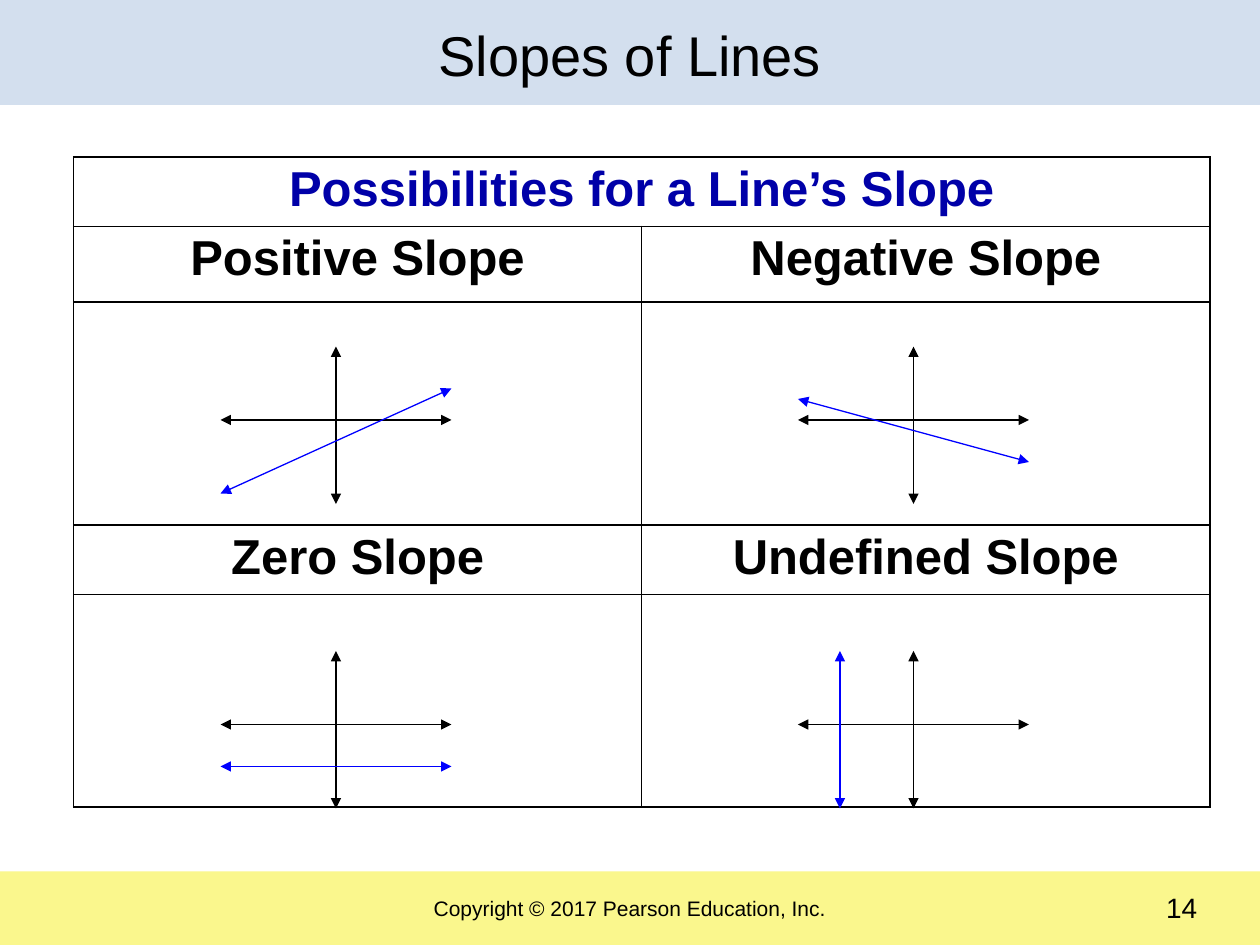
from dataclasses import dataclass
from lxml.etree import SubElement
from pptx import Presentation
from pptx.dml.color import RGBColor
from pptx.enum.shapes import MSO_CONNECTOR, MSO_SHAPE
from pptx.enum.text import MSO_ANCHOR, PP_ALIGN
from pptx.oxml.ns import qn
from pptx.util import Pt


@dataclass(frozen=True)
class Theme:
    """Colours, type sizes and font of the slide."""
    font: str = "Arial"
    black: str = "000000"
    blue: str = "0000FF"
    navy: str = "0000A8"
    sky: str = "D3DFEE"
    yellow: str = "FAF78D"
    title: int = 32
    head: int = 28
    page: int = 16
    foot: int = 12


THEME = Theme()
WIDTH, HEIGHT = 720, 540
HEADS = (
    (0, 0, "Possibilities for a Line’s Slope", THEME.navy),
    (1, 0, "Positive Slope", THEME.black),
    (1, 1, "Negative Slope", THEME.black),
    (3, 0, "Zero Slope", THEME.black),
    (3, 1, "Undefined Slope", THEME.black),
)
ROWS = (38.4, 43.2, 127.4, 38.2, 121.6)
GRAPHS = (
    (192, 240, (-66, 42, 66, -18)),
    (522, 240, (-66, -12, 66, 24)),
    (192, 414, (-66, 24, 66, 24)),
    (522, 414, (-42, 48, -42, -42)),
)


def write(frame, text, size, align=PP_ALIGN.CENTER, color=THEME.black, bold=False):
    """Put one formatted paragraph into a text frame."""
    frame.text = text
    para = frame.paragraphs[0]
    para.alignment = align
    font = para.runs[0].font
    font.name, font.size, font.bold = THEME.font, Pt(size), bold
    font.color.rgb = RGBColor.from_string(color)


def add_band(slide, top, height, color):
    """Add a plain strip across the slide."""
    band = slide.shapes.add_shape(
        MSO_SHAPE.RECTANGLE, Pt(0), Pt(top), Pt(WIDTH), Pt(height))
    band.shadow.inherit = False
    band.fill.solid()
    band.fill.fore_color.rgb = RGBColor.from_string(color)
    band.line.fill.background()
    return band


def add_title(slide, text):
    """Centre the title in the top band and bring it forward."""
    title = slide.shapes.title
    title.left, title.top = Pt(0), Pt(1)
    title.width, title.height = Pt(WIDTH), Pt(60)
    title.text_frame.vertical_anchor = MSO_ANCHOR.MIDDLE
    write(title.text_frame, text, THEME.title)
    title.element.getparent().append(title.element)


def add_page(slide, text):
    """Add the page number at the lower right."""
    box = slide.shapes.add_textbox(Pt(523.2), Pt(505.4), Pt(168), Pt(24))
    box.text_frame.word_wrap = True
    write(box.text_frame, text, THEME.page, PP_ALIGN.RIGHT)


def add_rules(cell):
    """Draw a thin black border on each side of a cell."""
    props = cell._tc.get_or_add_tcPr()
    for side in ("a:lnL", "a:lnR", "a:lnT", "a:lnB"):
        rule = SubElement(props, qn(side), w=str(Pt(1)))
        fill = SubElement(rule, qn("a:solidFill"))
        SubElement(fill, qn("a:srgbClr"), val=THEME.black)


def add_grid(slide):
    """Add the table of slope kinds."""
    table = slide.shapes.add_table(
        len(ROWS), 2, Pt(42), Pt(89.8), Pt(649.4), Pt(sum(ROWS))).table
    table.first_row = table.horz_banding = False
    for row, height in zip(table.rows, ROWS):
        row.height = Pt(height)
    for cell in table.iter_cells():
        add_rules(cell)
        cell.fill.background()
        cell.margin_top = cell.margin_bottom = Pt(3)
    table.cell(0, 0).merge(table.cell(0, 1))
    for row, col, text, color in HEADS:
        write(table.cell(row, col).text_frame, text, THEME.head,
              color=color, bold=True)


def add_arrow(slide, ends, color):
    """Add a line with an arrowhead at both ends."""
    line = slide.shapes.add_connector(
        MSO_CONNECTOR.STRAIGHT, *(Pt(end) for end in ends))
    line.line.width = Pt(0.75)
    line.line.color.rgb = RGBColor.from_string(color)
    stroke = line.line._get_or_add_ln()
    for tag in ("a:headEnd", "a:tailEnd"):
        SubElement(stroke, qn(tag), type="triangle")
    SubElement(line.element.spPr, qn("a:effectLst"))


def add_graph(slide, x, y, slope):
    """Add a pair of axes crossing at x, y and a sloped line."""
    left, top, right, low = slope
    add_arrow(slide, (x, y - 42, x, y + 48), THEME.black)
    add_arrow(slide, (x - 66, y, x + 66, y), THEME.black)
    add_arrow(slide, (x + left, y + top, x + right, y + low), THEME.blue)


def main():
    """Build and save the slide."""
    deck = Presentation()
    deck.slide_width, deck.slide_height = Pt(WIDTH), Pt(HEIGHT)
    slide = deck.slides.add_slide(deck.slide_layouts[5])
    foot = add_band(slide, 498, 42, THEME.yellow)
    foot.text_frame.vertical_anchor = MSO_ANCHOR.MIDDLE
    write(foot.text_frame, "Copyright © 2017 Pearson Education, Inc.", THEME.foot)
    add_page(slide, "14")
    add_band(slide, 0, 60, THEME.sky)
    add_grid(slide)
    add_title(slide, "Slopes of Lines")
    for graph in GRAPHS:
        add_graph(slide, *graph)
    deck.save("out.pptx")


if __name__ == "__main__":
    main()
